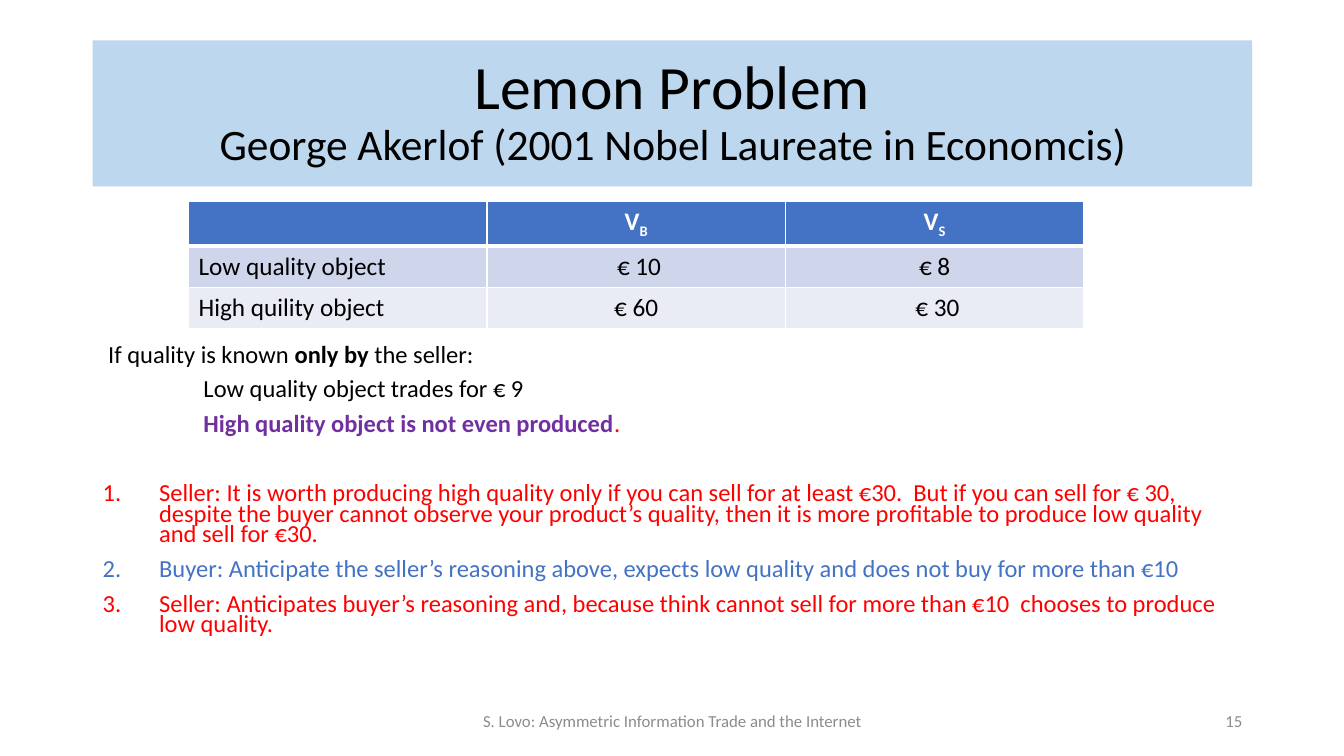
"""Build the slide on the lemon problem."""
import pptx
import pptx.dml.color
import pptx.enum.shapes
import pptx.enum.text
import pptx.oxml
import pptx.oxml.ns
import pptx.util

RGB = pptx.dml.color.RGBColor
ALIGN = pptx.enum.text.PP_ALIGN
MIDDLE = pptx.enum.text.MSO_ANCHOR.MIDDLE
PX = 9144
BLACK = RGB(0, 0, 0)
WHITE = RGB(255, 255, 255)
GRAY = RGB(0x8C, 0x8C, 0x8C)
SKY = RGB(0xBD, 0xD7, 0xEE)
BLUE = RGB(0x44, 0x72, 0xC4)
RED = RGB(255, 0, 0)
PURPLE = RGB(0x70, 0x30, 0xA0)
BANDS = [BLUE, RGB(0xCF, 0xD5, 0xEA), RGB(0xE9, 0xEB, 0xF5)]

VALUES = [
    ["", "V_B", "V_S"],
    ["Low quality object", " € 10", "€ 8"],
    ["High quility object", "€\u00a060", " € 30"],
]
STEPS = [
    ("Seller: It is worth producing high quality only if you can sell for at least €30.  "
     "But if you can sell for € 30, despite the buyer cannot observe your product’s quality, "
     "then it is more profitable to produce low quality and sell for €30.", RED),
    ("Buyer: Anticipate the seller’s reasoning above, expects low quality "
     "and does not buy for more than €10", BLUE),
    ("Seller: Anticipates buyer’s reasoning and, because think cannot sell for more than €10  "
     "chooses to produce low quality.", RED),
]


def write(para, text, size=17.5, color=BLACK, bold=False, base=0):
    """Add a run of text in the given format."""
    run = para.add_run()
    run.text = text
    font = run.font
    font.name, font.size, font.bold = "Calibri", pptx.util.Pt(size), bold
    font.color.rgb = color
    if base:
        run._r.get_or_add_rPr().set("baseline", str(base * 1000))


def add_box(slide, left, top, width, height):
    """Add a wrapping text box and return its frame."""
    box = slide.shapes.add_textbox(left * PX, top * PX, width * PX, height * PX)
    box.text_frame.word_wrap = True
    return box.text_frame


def add_title(slide):
    """Add the title band."""
    band = slide.shapes.add_shape(
        pptx.enum.shapes.MSO_SHAPE.RECTANGLE, 92 * PX, 40 * PX, 1150 * PX, 145 * PX)
    band.shadow.inherit = False
    band.fill.solid()
    band.fill.fore_color.rgb = SKY
    band.line.fill.background()
    frame = band.text_frame
    frame.vertical_anchor = MIDDLE
    para = frame.paragraphs[0]
    para.alignment, para.line_spacing = ALIGN.CENTER, 0.9
    write(para, "Lemon Problem", size=44)
    para.add_line_break()
    write(para, "George Akerlof (2001 Nobel Laureate in Economcis)", size=31)


def edge(cell, side, width):
    """Draw one white border of a cell."""
    props = cell._tc.get_or_add_tcPr()
    line = pptx.oxml.parse_xml(
        f'<a:ln{side} {pptx.oxml.ns.nsdecls("a")} w="{width * 12700}">'
        f'<a:solidFill><a:srgbClr val="{WHITE}"/></a:solidFill></a:ln{side}>')
    props.append(line)


def add_grid(slide):
    """Add the table of values."""
    grid = slide.shapes.add_table(3, 3, 187 * PX, 200 * PX, 888 * PX, 120 * PX).table
    for col in grid.columns:
        col.width = 296 * PX
    for i, texts in enumerate(VALUES):
        grid.rows[i].height = (41 if i else 38) * PX
        for j, text in enumerate(texts):
            cell = grid.cell(i, j)
            for side in "LRTB":
                thick = (i, side) in [(0, "B"), (1, "T")]
                edge(cell, side, 3 if thick else 1)
            cell.fill.solid()
            cell.fill.fore_color.rgb = BANDS[i]
            if not text:
                continue
            para = cell.text_frame.paragraphs[0]
            para.alignment = ALIGN.CENTER if j else ALIGN.LEFT
            look = {"size": 18, "color": BLACK if i else WHITE, "bold": i == 0}
            main_part, _, sub = text.partition("_")
            write(para, main_part, **look)
            if sub:
                write(para, sub, base=-25, **look)


def add_line(frame, runs, before=10, left=0, count=False):
    """Add a body paragraph from runs of text and format."""
    para = frame.paragraphs[0]
    if para.runs:
        para = frame.add_paragraph()
    para.line_spacing = 0.7
    para.space_before = pptx.util.Pt(before)
    props = para._p.get_or_add_pPr()
    props.set("marL", str(left * PX))
    if count:
        props.set("indent", str(-left * PX))
        props.append(pptx.oxml.parse_xml(
            f'<a:buFont {pptx.oxml.ns.nsdecls("a")} typeface="+mj-lt"/>'))
        props.append(pptx.oxml.parse_xml(
            f'<a:buAutoNum {pptx.oxml.ns.nsdecls("a")} type="arabicPeriod"/>'))
    for text, look in runs:
        write(para, text, **look)


def add_body(slide):
    """Add the outcome and the numbered steps."""
    frame = add_box(slide, 92, 339, 1150, 337)
    add_line(frame, [(" If quality is known ", {}), ("only by ", {"bold": True}),
                     ("the seller:", {})])
    add_line(frame, [("Low quality object trades for € 9", {})], left=100)
    add_line(frame, [("High quality object is not even produced",
                      {"color": PURPLE, "bold": True}), (".", {"color": RED})], left=100)
    for i, (text, color) in enumerate(STEPS):
        add_line(frame, [(text, {"color": color})], before=10 if i else 35,
                 left=56, count=True)


def add_foot(slide, text, left, width, align):
    """Add a piece of the footer."""
    frame = add_box(slide, left, 695, width, 40)
    frame.vertical_anchor = MIDDLE
    para = frame.paragraphs[0]
    para.alignment = align
    write(para, text, size=12, color=GRAY)


def main():
    """Build and save the slide."""
    deck = pptx.Presentation()
    deck.slide_width, deck.slide_height = 1333 * PX, 750 * PX
    slide = deck.slides.add_slide(deck.slide_layouts[6])
    add_title(slide)
    add_body(slide)
    add_grid(slide)
    add_foot(slide, "S. Lovo: Asymmetric Information Trade and the Internet",
             442, 450, ALIGN.CENTER)
    add_foot(slide, "15", 942, 300, ALIGN.RIGHT)
    deck.save("out.pptx")


if __name__ == "__main__":
    main()
